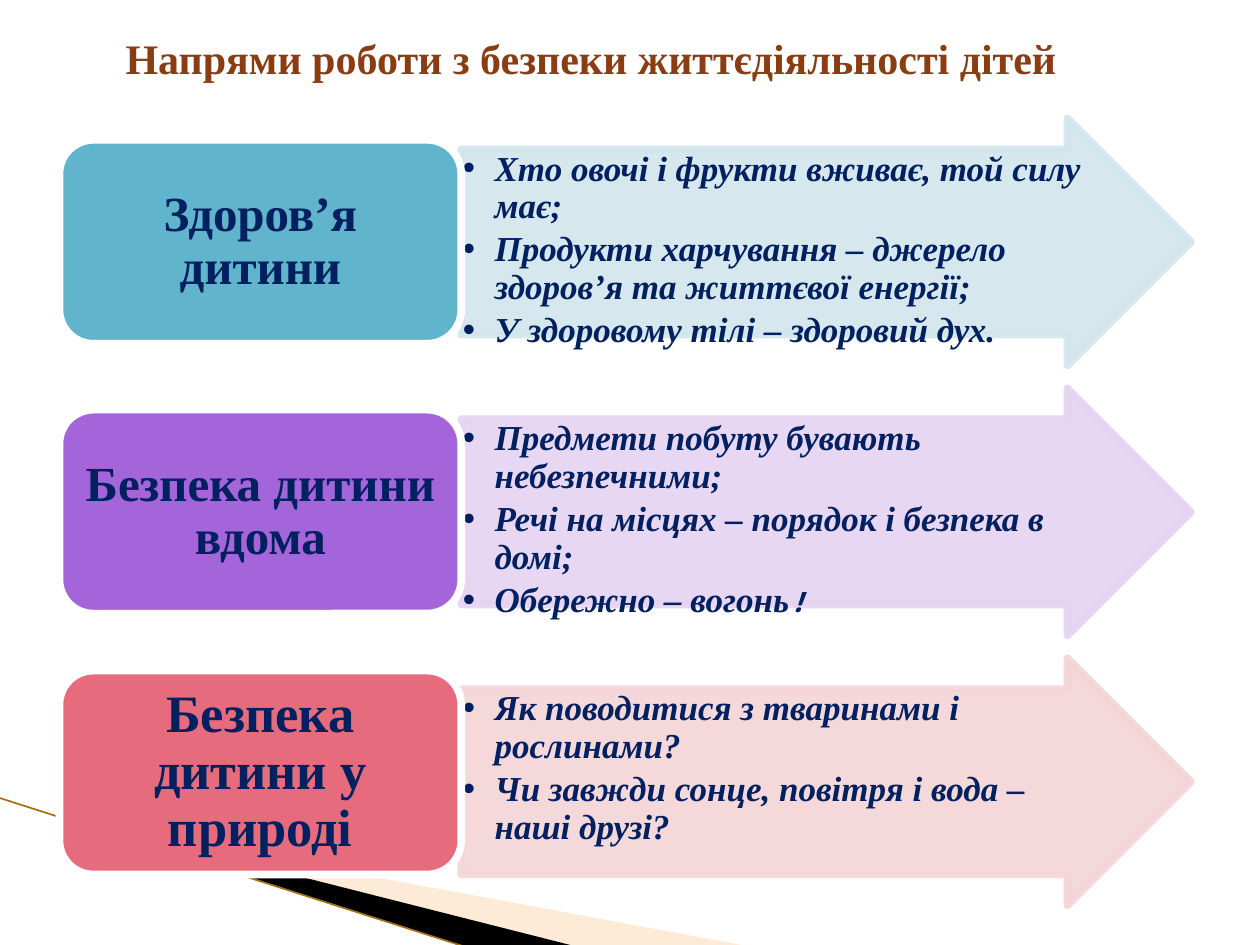
from lxml.etree import SubElement
from pptx import Presentation
from pptx.dml.color import RGBColor
from pptx.enum.shapes import MSO_CONNECTOR, MSO_SHAPE
from pptx.enum.text import MSO_ANCHOR as ANCHOR, MSO_AUTO_SIZE as AUTO_SIZE, PP_ALIGN as ALIGN
from pptx.oxml.ns import qn
from pptx.util import Cm, Pt

COLORS = {
    "title": "8A3C12", "text": "002060", "white": "FFFFFF",
    "peach": "FCCF9B", "black": "000000", "gold": "A07010",
    "health": "60B5CC", "health_light": "D2E5EC",
    "home": "A465DA", "home_light": "E5D3F1",
    "nature": "E66C7D", "nature_light": "F5D4D7",
}
FONT = "Times New Roman"
ROW_TOP, ROW_STEP = 2.39, 5.44
ARROW_LEFT = 9.3

# color, label, label size, label offset from the row top, list items
DIRECTIONS = [
    ("health", "Здоров’я дитини", 28, 0.43, [
        "Хто овочі і фрукти вживає, той силу має;",
        "Продукти харчування – джерело здоров’я та життєвої енергії;",
        "У здоровому тілі – здоровий дух."]),
    ("home", "Безпека дитини вдома", 28, 0.43, [
        "Предмети побуту бувають небезпечними;",
        "Речі на місцях – порядок і безпека в домі;",
        "Обережно – вогонь"]),
    ("nature", "Безпека дитини у природі", 30, 0.25, [
        "Як поводитися з тваринами і рослинами?",
        "Чи завжди сонце, повітря і вода – наші друзі?"]),
]


def rgb(name):
    return RGBColor.from_string(COLORS[name])


def set_attributes(target, values):
    for name, value in values.items():
        setattr(target, name, value)


def place(shape, left, top, width, height):
    set_attributes(shape, {"left": Cm(left), "top": Cm(top),
                           "width": Cm(width), "height": Cm(height)})


def set_frame(frame, anchor, horizontal, vertical):
    set_attributes(frame, {
        "word_wrap": True, "auto_size": AUTO_SIZE.NONE, "vertical_anchor": anchor,
        "margin_left": Cm(horizontal), "margin_right": Cm(horizontal),
        "margin_top": Cm(vertical), "margin_bottom": Cm(vertical)})


def add_run(paragraph, text, size, color="text", name=FONT, italic=False):
    run = paragraph.add_run()
    run.text = text
    set_attributes(run.font, {"name": name, "size": Pt(size), "bold": True, "italic": italic})
    run.font.color.rgb = rgb(color)


def set_alpha(fill_parent, percent):
    """Make the solid fill inside an spPr or ln element partly transparent."""
    color = fill_parent.find(qn("a:solidFill"))[0]
    SubElement(color, qn("a:alpha"), val=str(percent * 1000))


def style_shape(shape, fill, line=None):
    shape.shadow.inherit = False
    shape.fill.solid()
    shape.fill.fore_color.rgb = rgb(fill)
    if line:
        shape.line.color.rgb = rgb(line)
        shape.line.width = Pt(4.33)
    else:
        shape.line.fill.background()


def add_polygon(slide, points, fill):
    start, *rest = [(Cm(x), Cm(y)) for x, y in points]
    builder = slide.shapes.build_freeform(*start)
    builder.add_line_segments(rest, close=True)
    polygon = builder.convert_to_shape()
    style_shape(polygon, fill)
    return polygon


def add_corner_decoration(slide):
    wedge = add_polygon(slide, [(1.4, 16.54), (15.11, 19.08), (11.58, 19.08), (1.4, 16.51)],
                        "peach")
    set_alpha(wedge._element.spPr, 40)
    add_polygon(slide, [(1.35, 16.48), (11.61, 19.08), (9.45, 19.1), (1.37, 16.51)], "black")
    line = slide.shapes.add_connector(MSO_CONNECTOR.STRAIGHT, Cm(-0.03), Cm(16.08),
                                      Cm(9.42), Cm(19.1))
    line.line.color.rgb = rgb("gold")
    line.line.width = Pt(0.95)
    SubElement(line._element.spPr, qn("a:effectLst"))


def add_arrow(slide, top, color):
    arrow = slide.shapes.add_shape(MSO_SHAPE.RIGHT_ARROW, Cm(ARROW_LEFT), Cm(top),
                                   Cm(14.71), Cm(4.98))
    arrow.adjustments[0], arrow.adjustments[1] = 0.75, 0.5
    style_shape(arrow, color, color)
    properties = arrow._element.spPr
    for fill_parent in (properties, properties.find(qn("a:ln"))):
        set_alpha(fill_parent, 90)


def fill_list(slide, placeholder, top, items):
    """Put the bulleted items in a body placeholder, in front of its arrow."""
    slide.shapes._spTree.append(placeholder._element)
    place(placeholder, ARROW_LEFT, top, 12.83, 3.73)
    frame = placeholder.text_frame
    set_frame(frame, ANCHOR.TOP, 0.03, 0.03)
    for index, item in enumerate(items):
        paragraph = frame.add_paragraph() if index else frame.paragraphs[0]
        set_attributes(paragraph, {"level": 1, "alignment": ALIGN.LEFT, "line_spacing": 0.9,
                                   "space_before": Pt(0), "space_after": Pt(3)})
        properties = paragraph._p.get_or_add_pPr()
        properties.set("marL", str(Cm(0.64)))
        properties.set("indent", str(Cm(-0.64)))
        SubElement(properties, qn("a:buChar"), char="•")
        add_run(paragraph, item, 20, italic=True)
    return frame


def add_label(slide, top, text, size, color):
    label = slide.shapes.add_shape(MSO_SHAPE.ROUNDED_RECTANGLE, Cm(1.2), Cm(top),
                                   Cm(8.1), Cm(4.11))
    style_shape(label, color, "white")
    set_frame(label.text_frame, ANCHOR.MIDDLE, 0.3, 0.15)
    paragraph = label.text_frame.paragraphs[0]
    set_attributes(paragraph, {"alignment": ALIGN.CENTER, "line_spacing": 0.9})
    add_run(paragraph, text, size)


def fill_title(title, text):
    place(title, 1.3, 0.33, 21.44, 1.65)
    set_frame(title.text_frame, ANCHOR.MIDDLE, 0.25, 0.13)
    paragraph = title.text_frame.paragraphs[0]
    paragraph.alignment = ALIGN.CENTER
    add_run(paragraph, text, 24, "title")


def main():
    presentation = Presentation()
    set_attributes(presentation, {"slide_width": Cm(25.4), "slide_height": Cm(19.05)})
    slide = presentation.slides.add_slide(presentation.slide_layouts.get_by_name("Comparison"))
    title, *bodies = slide.placeholders
    spare = bodies.pop()._element
    spare.getparent().remove(spare)

    add_corner_decoration(slide)
    frames = {}
    for row, (color, label, size, offset, items) in enumerate(DIRECTIONS):
        top = ROW_TOP + row * ROW_STEP
        add_arrow(slide, top, f"{color}_light")
        frames[color] = fill_list(slide, bodies[row], top + 0.62, items)
        add_label(slide, top + offset, label, size, color)
    add_run(frames["home"].paragraphs[-1], "!", 16, name="Noto Sans Mono", italic=True)
    fill_title(title, "Напрями роботи з безпеки життєдіяльності дітей ")
    presentation.save("out.pptx")


if __name__ == "__main__":
    main()
